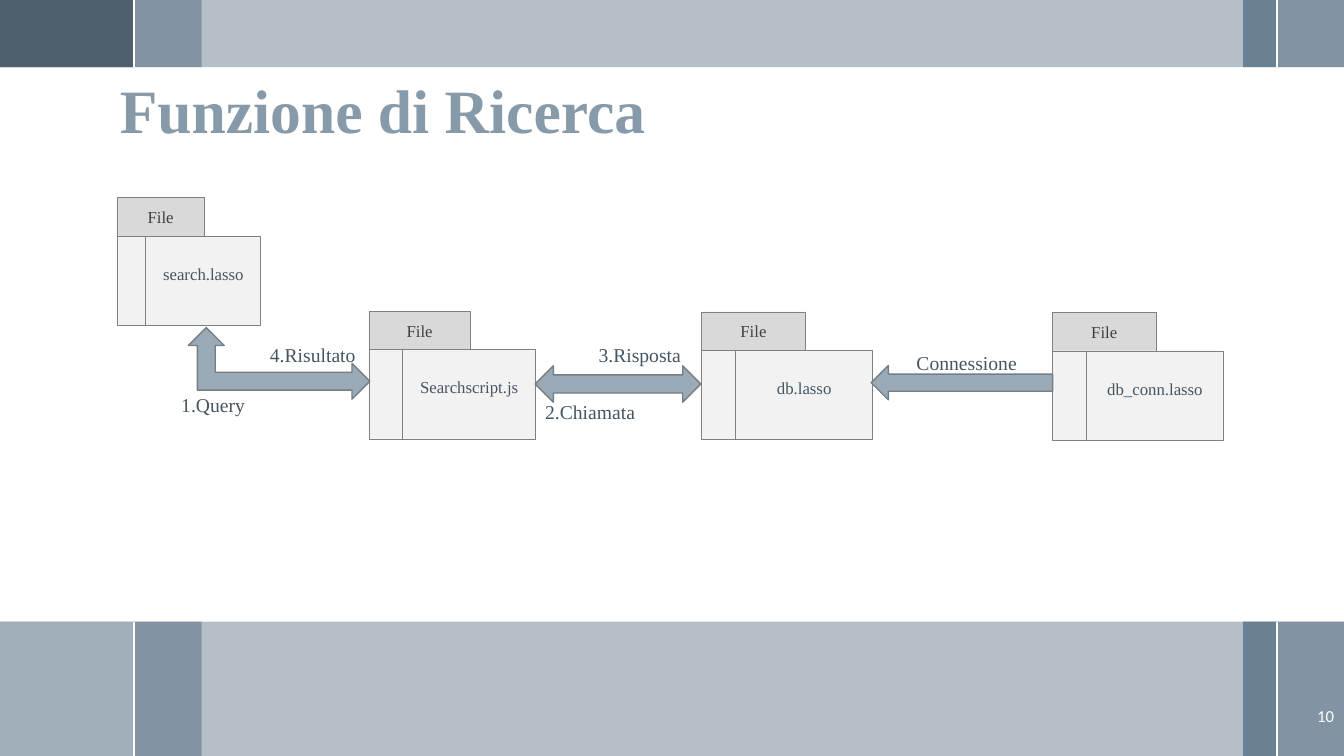
import pptx
import pptx.dml.color
import pptx.enum.shapes
import pptx.enum.text
import pptx.oxml.ns
import pptx.util
from lxml import etree

COLUMNS, ROWS = 40, 22.5
CELL = pptx.util.Inches(1) / 3
SERIF = "Times New Roman"
PRESET = pptx.enum.shapes.MSO_SHAPE
ALIGN = pptx.enum.text.PP_ALIGN
ANCHOR = pptx.enum.text.MSO_ANCHOR

COLORS = {
    "mist": "9BAAB7", "steel": "6A8093", "slate": "475562",
    "title": "879AAA", "ink": "465562", "tab_ink": "404040",
    "tab": "D9D9D9", "body": "F2F2F2", "edge": "808080",
    "arrow_edge": "737E87", "white": "FFFFFF",
}


def rgb(name):
    return pptx.dml.color.RGBColor.from_string(COLORS[name])


def cells(*lengths):
    """Turn grid lengths into EMU."""
    return [round(length * CELL) for length in lengths]


def add_block(shapes, box, fill, preset=PRESET.RECTANGLE, opacity=None, edge=None, edge_width=0.25):
    block = shapes.add_shape(preset, *cells(*box))
    block.shadow.inherit = False
    block.fill.solid()
    block.fill.fore_color.rgb = rgb(fill)
    if opacity is not None:
        color = block.element.spPr.find(".//" + pptx.oxml.ns.qn("a:srgbClr"))
        etree.SubElement(color, pptx.oxml.ns.qn("a:alpha")).set("val", str(opacity * 1000))
    if edge:
        block.line.color.rgb = rgb(edge)
        block.line.width = pptx.util.Pt(edge_width)
    else:
        block.line.fill.background()
    return block


def add_vertical(shapes, x, top, height, color, width):
    line = shapes.add_connector(
        pptx.enum.shapes.MSO_CONNECTOR.STRAIGHT, *cells(x, top, x, top + height))
    line.line.color.rgb = rgb(color)
    line.line.width = pptx.util.Pt(width)
    etree.SubElement(line.element.spPr, pptx.oxml.ns.qn("a:effectLst"))


def write_text(holder, text, size, color, font=SERIF, bold=False, align=ALIGN.LEFT,
               anchor=ANCHOR.TOP, wrap=True, insets=(0.1, 0.05, 0.1, 0.05), spacing=None):
    """Fill a shape with one line of text; insets are left, top, right, bottom in inches."""
    frame = holder.text_frame
    frame.word_wrap = wrap
    frame.vertical_anchor = anchor
    frame.margin_left, frame.margin_top, frame.margin_right, frame.margin_bottom = (
        pptx.util.Inches(inset) for inset in insets)
    paragraph = frame.paragraphs[0]
    paragraph.alignment = align
    if spacing:
        paragraph.line_spacing = spacing
    run = paragraph.add_run()
    run.text = text
    run.font.name = font
    run.font.size = pptx.util.Pt(size)
    run.font.bold = bold
    run.font.color.rgb = rgb(color)


def add_text(shapes, box, text, **text_format):
    write_text(shapes.add_textbox(*cells(*box)), text, **text_format)


def add_band(shapes, top, height, corner, corner_base=None):
    """Draw a full-width band of blocks under a translucent veil."""
    for left, width, fill in ((38, 2, "mist"), (37, 1, "steel"), (4, 2, "mist")):
        add_block(shapes, (left, top, width, height), fill)
    if corner_base:
        add_block(shapes, (0, top, 4, height), corner_base)
    add_block(shapes, (0, top, COLUMNS, height), "steel", opacity=50)
    add_vertical(shapes, 38, top, height, "white", 1.5)
    add_block(shapes, (0, top, 4, height), corner, opacity=75)
    add_vertical(shapes, 4, top, height, "white", 1.5)


def add_file(shapes, box, name):
    """Draw a file symbol: body with a left margin, and a tab on top."""
    left, top, width, height = box
    tab_height = 0.3 * height
    body_top, body_height = top + tab_height, height - tab_height
    margin = 0.2 * width
    parts = shapes.add_group_shape().shapes
    add_block(parts, (left, body_top, width, body_height), "body", edge="edge")
    add_vertical(parts, left + margin, body_top, body_height, "edge", 0.25)
    add_text(parts, (left + margin, body_top, width - margin, 0.82 * body_height), name,
             size=12, color="ink", align=ALIGN.CENTER, anchor=ANCHOR.MIDDLE,
             insets=(0.06, 0.05, 0.05, 0.03))
    tab = add_block(parts, (left, top, 0.61 * width, tab_height), "tab", edge="edge")
    write_text(tab, "File", size=12, color="tab_ink", align=ALIGN.CENTER,
               anchor=ANCHOR.MIDDLE, insets=(0.05,) * 4)


def add_search_flow(shapes, box):
    """Place the files, arrows and step labels from the top left of the box."""
    left, top, width, height = box

    def place(x, y, w, h):
        return left + x, top + y, w, h

    files = (
        ("search.lasso", 0, 0, 4.27),
        ("db.lasso", 17.4, 3.4, 5.07),
        ("Searchscript.js", 7.5, 3.38, 4.95),
        ("db_conn.lasso", width - 5.07, 3.42, 5.07),
    )
    for name, x, y, file_width in files:
        add_file(shapes, place(x, y, file_width, 3.8), name)

    arrows = (
        (PRESET.LEFT_UP_ARROW, 2.13, 3.87, 5.4, 2.13),
        (PRESET.LEFT_RIGHT_ARROW, 12.45, 5.01, 4.93, 1.08),
        (PRESET.LEFT_ARROW, 22.45, 5, 5.4, 1.02),
    )
    for preset, *arrow_box in arrows:
        arrow = add_block(shapes, place(*arrow_box), "mist", preset,
                          edge="arrow_edge", edge_width=1)
        if preset == PRESET.LEFT_UP_ARROW:
            arrow.element.spPr.find(pptx.oxml.ns.qn("a:xfrm")).set("flipH", "1")

    steps = (
        ("1.Query", 1.62, 5.67, 2.52),
        ("2.Chiamata", 12.45, 5.89, 3.3),
        ("3.Risposta", 14.04, 4.19, 3.09),
        ("4.Risultato", 4.26, 4.19, 3.18),
        ("Connessione", 23.5, 4.43, 3.63),
    )
    for text, x, y, step_width in steps:
        add_text(shapes, place(x, y, step_width, 1.02), text, size=14, color="ink", wrap=False)


def main():
    deck = pptx.Presentation()
    deck.slide_width, deck.slide_height = cells(COLUMNS, ROWS)
    shapes = deck.slides.add_slide(deck.slide_layouts[6]).shapes
    add_band(shapes, ROWS - 4, 4, "mist")
    add_band(shapes, 0, 2, "slate", corner_base="steel")
    add_text(shapes, (3.27, 2.07, 23.6, 2.6), "Funzione di Ricerca", size=44, color="title",
             bold=True, anchor=ANCHOR.MIDDLE, spacing=0.9)
    add_search_flow(shapes, (3.48, 5.88, 32.91, 7.22))
    add_text(shapes, (38, 20.7, 2, 1.2), "10", size=12, color="white", font="Calibri",
             align=ALIGN.RIGHT, anchor=ANCHOR.MIDDLE)
    deck.save("out.pptx")


if __name__ == "__main__":
    main()
